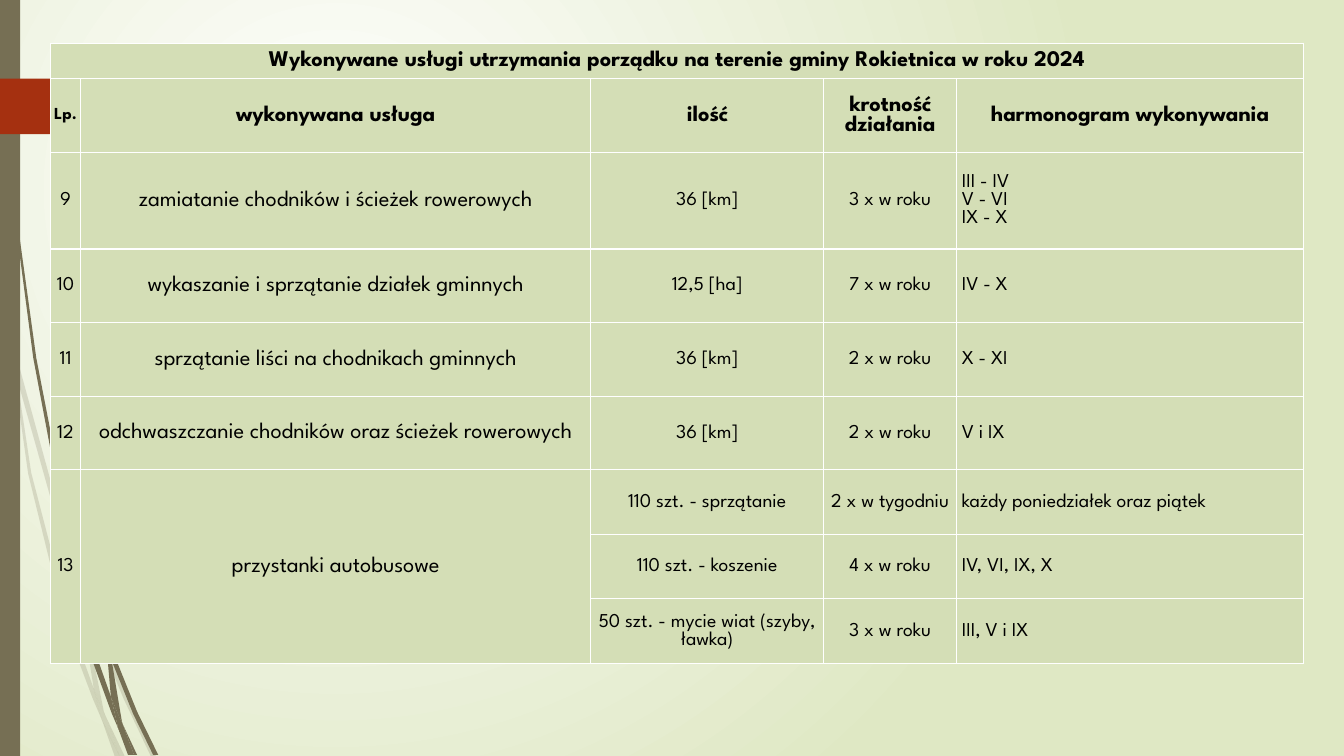
from dataclasses import dataclass

from lxml import etree
from pptx import Presentation
from pptx.dml.color import RGBColor
from pptx.enum.shapes import MSO_SHAPE
from pptx.enum.text import MSO_ANCHOR, PP_ALIGN
from pptx.oxml.ns import qn
from pptx.util import Inches, Pt

RECTANGLE, PENTAGON = MSO_SHAPE.RECTANGLE, MSO_SHAPE.PENTAGON
MIDDLE = MSO_ANCHOR.MIDDLE
CENTER, JUSTIFY = PP_ALIGN.CENTER, PP_ALIGN.JUSTIFY
GRID_COLUMNS, GRID_ROWS = 1333, 750


@dataclass(frozen=True)
class Theme:
    font: str = "League Spartan"
    text: str = "000000"
    cell: str = "D4DEB6"
    border: str = "FFFFFF"
    glow: str = "FFFFFF"
    meadow: str = "DFE8C4"
    stalk: str = "766F54"
    flag: str = "A53010"
    heading_size: int = 16
    body_size: int = 14
    index_size: int = 12
    border_width: int = 1
    faint: int = 20


class SlideBuilder:
    def __init__(self, presentation, theme):
        self.theme = theme
        self.column = presentation.slide_width // GRID_COLUMNS
        self.row = presentation.slide_height // GRID_ROWS
        self.slide = presentation.slides.add_slide(presentation.slide_layouts[6])

    def box(self, left, top, width, height):
        return left * self.column, top * self.row, width * self.column, height * self.row

    def background(self):
        fill = self.slide.background.fill
        fill.gradient()
        for stop, color in zip(fill.gradient_stops, (self.theme.glow, self.theme.meadow)):
            stop.color.rgb = RGBColor.from_string(color)
        gradient = next(self.slide.element.iter(qn("a:gradFill")))
        gradient.remove(gradient.find(qn("a:lin")))
        circle = etree.SubElement(gradient, qn("a:path"), path="circle")
        etree.SubElement(circle, qn("a:fillToRect"), l="50000", t="50000", r="100000", b="100000")

    def paint(self, shape, color, opacity=100):
        shape.shadow.inherit = False
        shape.line.fill.background()
        shape.fill.solid()
        shape.fill.fore_color.rgb = RGBColor.from_string(color)
        if opacity < 100:
            solid = next(shape.element.iter(qn("a:srgbClr")))
            etree.SubElement(solid, qn("a:alpha"), val=str(opacity * 1000))

    def block(self, kind, box, color):
        shape = self.slide.shapes.add_shape(kind, *self.box(*box))
        self.paint(shape, color)
        return shape

    def stalk(self, outline, opacity):
        builder = self.slide.shapes.build_freeform(*outline[0], scale=(self.column, self.row))
        builder.add_line_segments(outline[1:], close=True)
        self.paint(builder.convert_to_shape(), self.theme.stalk, opacity)

    def table(self, left, top, widths, heights):
        frame = self.slide.shapes.add_table(
            len(heights), len(widths), *self.box(left, top, sum(widths), sum(heights)))
        grid = frame.table
        grid.first_row = grid.horz_banding = False
        for column, width in zip(grid.columns, widths):
            column.width = width * self.column
        for row, height in zip(grid.rows, heights):
            row.height = height * self.row
        for cell in grid.iter_cells():
            self.cell_style(cell)
        return grid

    def cell_style(self, cell):
        cell.fill.solid()
        cell.fill.fore_color.rgb = RGBColor.from_string(self.theme.cell)
        properties = cell.fill._xPr
        for position, side in enumerate(("lnL", "lnR", "lnT", "lnB")):
            border = etree.Element(qn(f"a:{side}"), w=str(Pt(self.theme.border_width)))
            solid = etree.SubElement(border, qn("a:solidFill"))
            etree.SubElement(solid, qn("a:srgbClr"), val=self.theme.border)
            properties.insert(position, border)

    def cell_text(self, cell, text, size, bold=False, align=CENTER):
        cell.vertical_anchor = MIDDLE
        cell.margin_left = Inches(0.05 if align == JUSTIFY else 0.01)
        cell.margin_right = cell.margin_top = Inches(0.01)
        cell.margin_bottom = 0
        for number, line in enumerate(text.split("\n")):
            frame = cell.text_frame
            paragraph = frame.add_paragraph() if number else frame.paragraphs[0]
            paragraph.alignment = align
            run = paragraph.add_run()
            run.text = line
            run.font.name = self.theme.font
            run.font.size = Pt(size)
            run.font.bold = bold
            run.font.color.rgb = RGBColor.from_string(self.theme.text)


FAINT_STALKS = [
    [(58, 522), (84, 599), (85, 586), (62, 520), (14, 345), (17, 376)],
    [(92, 607), (88, 596), (88, 610), (123, 694), (150, 751), (155, 751), (127, 692)],
    [(119, 751), (124, 751), (105, 711)],
    [(93, 683), (70, 619), (31, 469), (17, 376), (11, 350), (28, 470), (65, 621),
     (92, 693), (101, 714), (99, 707)],
    [(84, 599), (87, 646), (93, 683), (96, 692), (105, 711), (103, 706), (91, 646),
     (88, 610), (88, 608)],
    [(101, 714), (114, 751), (119, 751)],
    [(96, 692), (93, 683), (99, 707), (101, 714), (119, 751), (105, 711)],
]
DARK_STALKS = [
    [(7, 110), (17, 233), (33, 355), (56, 477), (57, 481), (55, 457), (55, 453),
     (36, 355), (19, 232), (8, 109), (5, 48), (4, 0), (3, 0), (4, 48)],
    [(113, 649), (110, 641), (111, 656), (132, 708), (152, 749), (157, 749), (136, 706)],
    [(110, 691), (98, 657), (72, 556), (64, 505), (57, 477), (68, 557), (93, 659),
     (111, 708), (117, 722), (116, 717)],
    [(133, 749), (136, 749), (122, 719)],
    [(117, 722), (127, 749), (131, 749)],
    [(106, 645), (110, 691), (116, 706), (122, 719), (121, 716), (111, 656), (109, 651)],
    [(116, 706), (110, 691), (116, 717), (117, 722), (130, 749), (133, 749), (122, 719)],
]
COLUMN_WIDTHS = [30, 506, 231, 132, 344]
ROW_HEIGHTS = [35, 73, 96, 73, 73, 73, 64, 64, 64]
TITLE = "Wykonywane usługi utrzymania porządku na terenie gminy Rokietnica w roku 2024"
HEADINGS = ["Lp.", "wykonywana usługa", "ilość", "krotność działania", "harmonogram wykonywania"]
SERVICES = [
    ["9", "zamiatanie chodników i ścieżek rowerowych", "36 [km]", "3 x w roku",
     "III - IV\nV - VI\nIX - X"],
    ["10", "wykaszanie i sprzątanie działek gminnych", "12,5 [ha]", "7 x w roku", "IV - X"],
    ["11", "sprzątanie liści na chodnikach gminnych", "36 [km]", "2 x w roku", "X - XI"],
    ["12", "odchwaszczanie chodników oraz ścieżek rowerowych", "36 [km]", "2 x w roku", "V i IX"],
    ["13", "przystanki autobusowe", "110 szt. - sprzątanie", "2 x w tygodniu",
     "każdy poniedziałek oraz piątek"],
    [None, None, "110 szt. - koszenie", "4 x w roku", "IV, VI, IX, X"],
    [None, None, "50 szt. - mycie wiat (szyby, ławka)", "3 x w roku", "III, V i IX"],
]


def main():
    presentation = Presentation()
    presentation.slide_width, presentation.slide_height = Inches(13.33), Inches(7.5)
    theme = Theme()
    page = SlideBuilder(presentation, theme)
    page.background()
    for outlines, opacity in ((FAINT_STALKS, theme.faint), (DARK_STALKS, 100)):
        for outline in outlines:
            page.stalk(outline, opacity)
    page.block(RECTANGLE, (0, 0, 20, 750), theme.stalk)
    flag = page.block(PENTAGON, (0, 78, 174, 55), theme.flag)
    flag.adjustments[0] = 0.48

    schedule = page.table(50, 43, COLUMN_WIDTHS, ROW_HEIGHTS)
    schedule.cell(0, 0).merge(schedule.cell(0, 4))
    for column in (0, 1):
        schedule.cell(6, column).merge(schedule.cell(8, column))
    page.cell_text(schedule.cell(0, 0), TITLE, theme.heading_size, bold=True)
    for column, heading in enumerate(HEADINGS):
        size = theme.heading_size if column else theme.index_size
        page.cell_text(schedule.cell(1, column), heading, size, bold=True)
    for row, service in enumerate(SERVICES, start=2):
        for column, entry in enumerate(service):
            if entry:
                size = theme.heading_size if column == 1 else theme.body_size
                align = JUSTIFY if column == 4 else CENTER
                page.cell_text(schedule.cell(row, column), entry, size, align=align)
    presentation.save("out.pptx")


if __name__ == "__main__":
    main()
